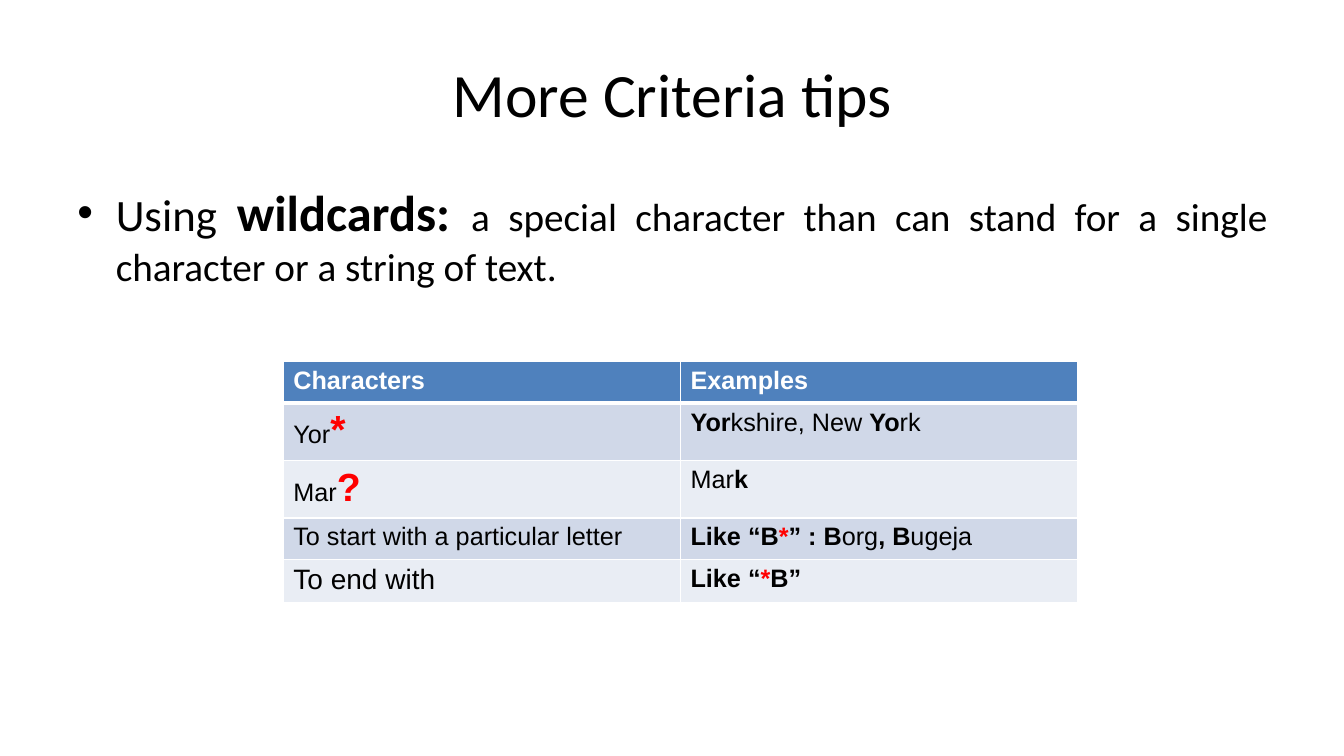
"""Build a slide on wildcard criteria with a table of examples."""
from lxml import etree
from pptx import Presentation
from pptx.dml.color import RGBColor
from pptx.enum.text import MSO_ANCHOR, PP_ALIGN
from pptx.oxml.ns import qn
from pptx.util import Inches, Pt

CENTER, JUSTIFY, LEFT = PP_ALIGN.CENTER, PP_ALIGN.JUSTIFY, PP_ALIGN.LEFT
TOP, MIDDLE = MSO_ANCHOR.TOP, MSO_ANCHOR.MIDDLE

BLACK = RGBColor(0x00, 0x00, 0x00)
WHITE = RGBColor(0xFF, 0xFF, 0xFF)
RED = RGBColor(0xFF, 0x00, 0x00)
BLUE = RGBColor(0x4F, 0x81, 0xBD)
BANDS = RGBColor(0xD0, 0xD8, 0xE8), RGBColor(0xE9, 0xED, 0xF4)

BOLD = {"bold": True}
MARK = {"bold": True, "ink": RED}
LARGE = {"bold": True, "ink": RED, "size": 28}

ROWS = [
    ([("Characters", BOLD)], [("Examples", BOLD)]),
    ([("Yor", {}), ("*", LARGE)],
     [("Yor", BOLD), ("kshire, New ", {}), ("Yo", BOLD), ("rk", {})]),
    ([("Mar", {}), ("?", LARGE)], [("Mar", {}), ("k", BOLD)]),
    ([("To start with a particular letter", {})],
     [("Like “B", BOLD), ("*", MARK), ("” : B", BOLD), ("org", {}),
      (", B", BOLD), ("ugeja", {})]),
    ([("To end with", {"size": 20})],
     [("Like “", BOLD), ("*", MARK), ("B”", BOLD)]),
]
HEIGHTS = [0.41, 0.57, 0.57, 0.41, 0.43]


class Deck:
    """Hold the fonts and the current slide, and add elements to it."""

    def __init__(self, head="Calibri", body="Arial"):
        self.head, self.body = head, body
        self.prs = Presentation()
        self.prs.slide_width = Inches(13.33)
        self.prs.slide_height = Inches(7.5)
        self.slide = self.prs.slides.add_slide(self.prs.slide_layouts[6])

    def fill(self, par, runs, face, size, ink=BLACK, align=LEFT):
        """Fill a paragraph with runs, styling each where it differs."""
        par.alignment = align
        par.font.name, par.font.size = face, Pt(size)
        par.font.color.rgb = ink
        for text, style in runs:
            run = par.add_run()
            run.text = text
            font = run.font
            font.name = face
            font.size = Pt(style.get("size", size))
            font.bold = style.get("bold", False)
            font.color.rgb = style.get("ink", ink)

    def text(self, top, height, runs, size, align, anchor=TOP, bullet=False):
        """Add a full-width text box with one paragraph."""
        box = self.slide.shapes.add_textbox(
            Inches(0.67), Inches(top), Inches(12), Inches(height))
        frame = box.text_frame
        frame.word_wrap = True
        frame.vertical_anchor = anchor
        par = frame.paragraphs[0]
        if bullet:
            props = par._p.get_or_add_pPr()
            props.set("marL", str(Inches(0.38)))
            props.set("indent", str(-Inches(0.38)))
            etree.SubElement(props, qn("a:buFont"), typeface="Arial")
            etree.SubElement(props, qn("a:buChar"), char="•")
        self.fill(par, runs, self.head, size, align=align)

    def edge(self, cell, **widths):
        """Draw white cell borders with the given widths in points."""
        props = cell._tc.get_or_add_tcPr()
        for spot, side in enumerate("LRTB"):
            line = etree.Element(
                qn("a:ln" + side), w=str(Pt(widths.get(side, 1))))
            paint = etree.SubElement(line, qn("a:solidFill"))
            etree.SubElement(paint, qn("a:srgbClr"), val=str(WHITE))
            props.insert(spot, line)

    def table(self, left, top, width, rows, heights):
        """Add a table with a header row and two alternating bands."""
        count = len(rows[0])
        grid = self.slide.shapes.add_table(
            len(rows), count, Inches(left), Inches(top),
            Inches(width), Inches(sum(heights))).table
        grid.first_row = grid.horz_banding = False
        for col in grid.columns:
            col.width = Inches(width / count)
        for i, (row, height) in enumerate(zip(rows, heights)):
            grid.rows[i].height = Inches(height)
            for j, runs in enumerate(row):
                cell = grid.cell(i, j)
                cell.fill.solid()
                cell.fill.fore_color.rgb = BANDS[(i - 1) % 2] if i else BLUE
                self.edge(cell, T=3 if i == 1 else 1, B=1 if i else 3)
                self.fill(cell.text_frame.paragraphs[0], runs, self.body,
                          18, BLACK if i else WHITE)


def main():
    """Build and save the slide."""
    deck = Deck()
    deck.text(0.3, 1.25, [("More Criteria tips", {})], 44, CENTER, MIDDLE)
    deck.text(1.75, 4.95, [
        ("Using ", {}),
        ("wildcards: ", {"size": 36, "bold": True}),
        ("a special character than can stand for a single character "
         "or a string of text.", {"size": 28}),
    ], 32, JUSTIFY, bullet=True)
    deck.table(2.81, 3.59, 7.88, ROWS, HEIGHTS)
    deck.prs.save("out.pptx")


if __name__ == "__main__":
    main()
